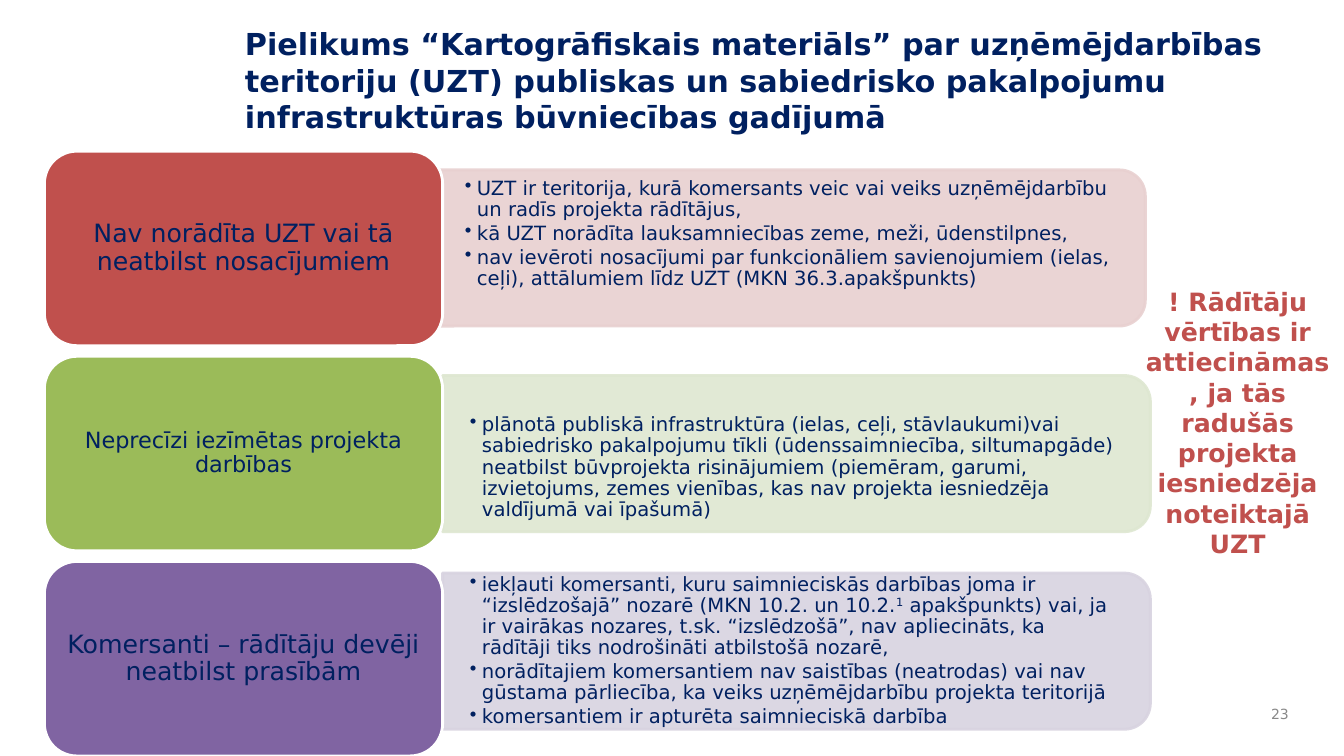
from pptx import Presentation
from pptx.dml.color import RGBColor
from pptx.enum.shapes import MSO_SHAPE as SHAPE
from pptx.enum.text import MSO_ANCHOR as ANCHOR, PP_ALIGN as ALIGN
from pptx.oxml.ns import qn
from pptx.util import Inches, Pt
from lxml import etree

COLORS = {
    "navy": "002060", "white": "FFFFFF", "grey": "898989",
    "red": "C0504D", "green": "9BBB59", "purple": "8064A2",
    "pale_red": "E8D0D0", "pale_green": "DEE7D1", "pale_purple": "D8D3E0",
}
FONT = "DejaVu Sans"


def add_run(p, text, size, color="navy", bold=False):
    r = p.add_run()
    r.text = text
    r.font.name = FONT
    r.font.size = Pt(size)
    r.font.bold = bold
    r.font.color.rgb = RGBColor.from_string(COLORS[color])
    return r


def paint(shape, fill, line):
    shape.shadow.inherit = False
    shape.fill.solid()
    shape.fill.fore_color.rgb = RGBColor.from_string(COLORS[fill])
    shape.line.color.rgb = RGBColor.from_string(COLORS[line])
    shape.line.width = Pt(2)


prs = Presentation()
prs.slide_width, prs.slide_height = Inches(13.33), Inches(7.5)
s = prs.slides.add_slide(prs.slide_layouts[5])

title = s.shapes.title
title.left, title.top = Inches(2.33), Inches(0.21)
title.width, title.height = Inches(10.37), Inches(1.17)
tf = title.text_frame
tf.word_wrap = True
tf.vertical_anchor = ANCHOR.MIDDLE
p = tf.paragraphs[0]
p.alignment = ALIGN.LEFT
add_run(p, "Pielikums “Kartogrāfiskais materiāls” par uzņēmējdarbības teritoriju (UZT) "
           "publiskas un sabiedrisko pakalpojumu infrastruktūras būvniecības gadījumā", 21.6, bold=True)

rows = [
    ("red", "Nav norādīta UZT vai tā neatbilst nosacījumiem", 18, 4.34, 2.46, -0.14, [
        ["UZT ir teritorija, kurā komersants veic vai veiks uzņēmējdarbību un radīs projekta rādītājus,"],
        ["kā UZT norādīta lauksamniecības zeme, meži, ūdenstilpnes,"],
        ["nav ievēroti nosacījumi par funkcionāliem savienojumiem (ielas, ceļi), "
         "attālumiem līdz UZT (MKN 36.3.apakšpunkts)"],
    ]),
    ("green", "Neprecīzi iezīmētas projekta darbības", 16, 4.39, 4.5, 0.14, [
        ["plānotā publiskā infrastruktūra (ielas, ceļi, stāvlaukumi)vai sabiedrisko pakalpojumu tīkli "
         "(ūdenssaimniecība, siltumapgāde) neatbilst būvprojekta risinājumiem (piemēram, garumi, "
         "izvietojums, zemes vienības, kas nav projekta iesniedzēja valdījumā vai īpašumā)"],
    ]),
    ("purple", "Komersanti – rādītāju devēji neatbilst prasībām", 18, 4.39, 6.46, 0, [
        ["iekļauti komersanti, kuru saimnieciskās darbības joma ir “izslēdzošajā” nozarē "
         "(MKN 10.2. un 10.2.", "1", " apakšpunkts) vai, ja ir vairākas nozares, t.sk. “izslēdzošā”, "
         "nav apliecināts, ka rādītāji tiks nodrošināti atbilstošā nozarē,"],
        ["norādītajiem komersantiem nav saistības (neatrodas) vai nav gūstama pārliecība, "
         "ka veiks uzņēmējdarbību projekta teritorijā"],
        ["komersantiem ir apturēta saimnieciskā darbība"],
    ]),
]
PANEL_W, PANEL_H = 7.02, 1.55

for i, (color, label, size, left, middle, shift, items) in enumerate(rows):
    panel = s.shapes.add_shape(
        SHAPE.ROUND_2_SAME_RECTANGLE,
        Inches(left + (PANEL_W - PANEL_H) / 2), Inches(middle - PANEL_W / 2),
        Inches(PANEL_H), Inches(PANEL_W))
    panel.rotation = 90
    paint(panel, "pale_" + color, "pale_" + color)
    for clr in panel._element.spPr.iter(qn("a:srgbClr")):
        etree.SubElement(clr, qn("a:alpha"), val="90000")

    box = s.shapes.add_textbox(Inches(left), Inches(middle - PANEL_H / 2 + shift),
                               Inches(6.95), Inches(PANEL_H))
    tf = box.text_frame
    tf.word_wrap = True
    tf.vertical_anchor = ANCHOR.MIDDLE
    tf.margin_left = tf.margin_right = Inches(0.27)
    tf.margin_top = tf.margin_bottom = 0
    for n, parts in enumerate(items):
        p = tf.add_paragraph() if n else tf.paragraphs[0]
        p.line_spacing = 0.9
        p.space_after = Pt(2)
        pPr = p._p.get_or_add_pPr()
        pPr.set("marL", str(Inches(0.12)))
        pPr.set("indent", str(-Inches(0.12)))
        etree.SubElement(pPr, qn("a:buChar"), char="•")
        for part in parts:
            r = add_run(p, part, 14)
            if part == "1":
                r.font._element.set("baseline", "30000")

    card = s.shapes.add_shape(SHAPE.ROUNDED_RECTANGLE, Inches(0.44), Inches(1.5 + 2.035 * i),
                              Inches(3.95), Inches(1.93))
    paint(card, color, "white")
    tf = card.text_frame
    tf.word_wrap = True
    tf.vertical_anchor = ANCHOR.MIDDLE
    p = tf.paragraphs[0]
    p.alignment = ALIGN.CENTER
    p.line_spacing = 0.9
    add_run(p, label, size)

notes = [
    (12.44, 6.92, 0.44, 0.33, ALIGN.RIGHT, ANCHOR.MIDDLE, "23", 10, "grey", False),
    (11.22, 2.79, 2.11, 2.83, ALIGN.CENTER, ANCHOR.TOP,
     "! Rādītāju vērtības ir attiecināmas, ja tās radušās projekta iesniedzēja noteiktajā UZT",
     18, "red", True),
]
for x, y, w, h, align, anchor, text, size, color, bold in notes:
    tf = s.shapes.add_textbox(Inches(x), Inches(y), Inches(w), Inches(h)).text_frame
    tf.word_wrap = True
    tf.vertical_anchor = anchor
    p = tf.paragraphs[0]
    p.alignment = align
    add_run(p, text, size, color, bold)

prs.save("out.pptx")
